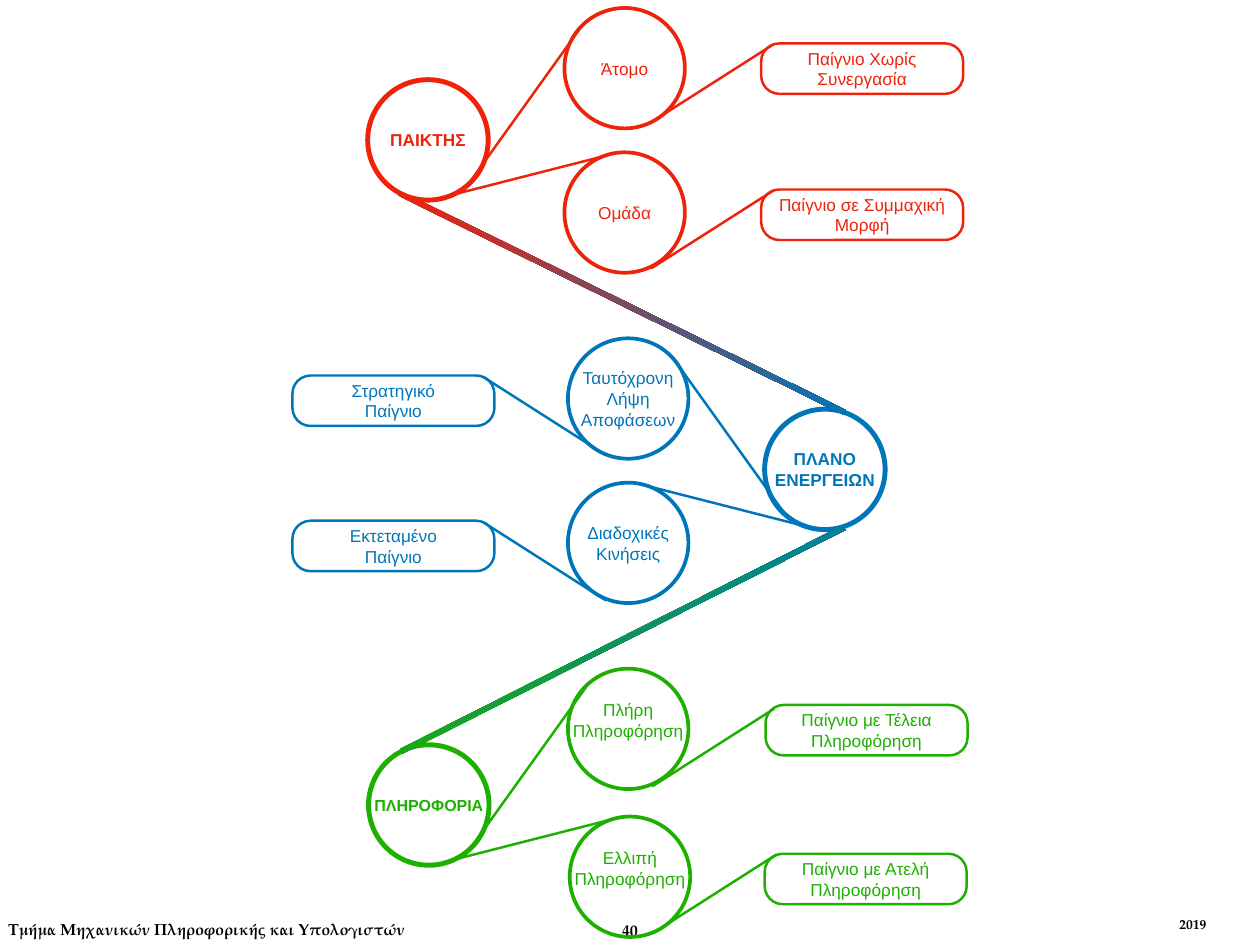
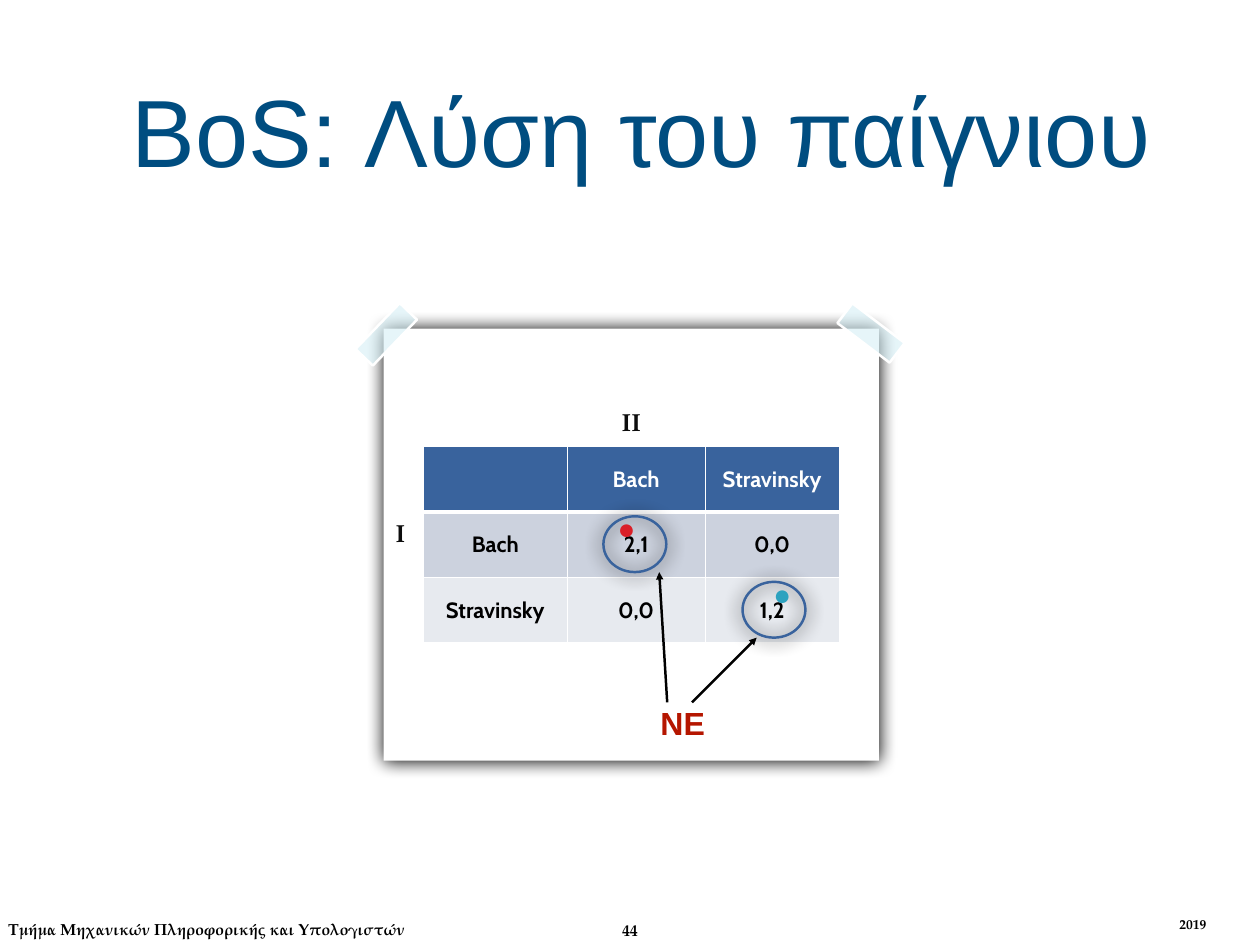
"""Builds two game theory slides: a map of game types and the solved BoS game."""
import pptx
import pptx.util
import pptx.dml.color
import pptx.enum.shapes
import pptx.enum.text
import pptx.oxml
import pptx.oxml.ns

PX = 9144
WIDTH, HEIGHT = 1422, 1067
SHAPE = pptx.enum.shapes.MSO_SHAPE
ALIGN = pptx.enum.text.PP_ALIGN
ANCHOR = pptx.enum.text.MSO_ANCHOR


class Theme:
    """Colours, fonts and type sizes."""
    red, blue, green = "EE230C", "0076BA", "1EB001"
    white, black, ink = "FFFFFF", "000000", "0D0D0D"
    title, header, answer = "004D80", "39639D", "B51600"
    bands = ["39639D", "CCD2DE", "E7EAEF"]
    tape, dot_one, dot_two = "D3EEF5", "DA1F28", "2DA2BF"
    sans, serif, table = "Arial", "TeX Gyre Pagella", "Cabin"
    title_size, answer_size, dot_size, player_size = 77.6, 26, 24, 20
    payoff_size, label_size, footer_size, year_size = 18, 14, 13, 11


DEPARTMENT, YEAR = "Τμήμα Μηχανικών Πληροφορικής και Υπολογιστών", "2019"

CIRCLE, OUTCOME = 136, (228, 57)
SPOKES = [(129, -180), (200, -51)]
OUTCOME_LINK = (138, -88)
BRANCHES = [
    dict(hub=("ΠΑΙΚΤΗΣ", 415, 90), size=Theme.label_size, color=Theme.red, side=1, lift=0, choices=[
        dict(choice=("Άτομο", 637, 9), spoke=(525, 213), link=(735, 138),
             outcome=("Παίγνιο Χωρίς\vΣυνεργασία", 859, 49)),
        dict(choice=("Ομάδα", 637, 172), spoke=(483, 227), link=(735, 303),
             outcome=("Παίγνιο σε Συμμαχική\vΜορφή", 859, 214))]),
    dict(hub=("ΠΛΑΝΟ\vΕΝΕΡΓΕΙΩΝ", 863, 462), size=Theme.label_size, color=Theme.blue, side=-1, lift=0, choices=[
        dict(choice=("Ταυτόχρονη\vΛήψη\vΑποφάσεων", 641, 382), spoke=(887, 582), link=(684, 514),
             outcome=("Στρατηγικό\vΠαίγνιο", 330, 424)),
        dict(choice=("Διαδοχικές\vΚινήσεις", 641, 545), spoke=(916, 596), link=(684, 678),
             outcome=("Εκτεταμένο\vΠαίγνιο", 330, 588))]),
    dict(hub=("ΠΛΗΡΟΦΟΡΙΑ", 416, 841), size=Theme.footer_size, color=Theme.green, side=1, lift=20, choices=[
        dict(choice=("Πλήρη\vΠληροφόρηση", 641, 755), spoke=(533, 955), link=(736, 888),
             outcome=("Παίγνιο με Τέλεια\vΠληροφόρηση", 864, 796)),
        dict(choice=("Ελλιπή\vΠληροφόρηση", 643, 922), spoke=(499, 974), link=(738, 1053),
             outcome=("Παίγνιο με Ατελή\vΠληροφόρηση", 863, 964))]),
]
BRIDGES = [((422, 339, 560, 6), 26.2, Theme.red), ((423, 719, 560, 6), 333.2, Theme.green)]

TITLE = "BoS: Λύση του παίγνιου"
PAYOFFS = [["", "Bach", "Stravinsky"], ["Bach", "2,1", "0,0"], ["Stravinsky", "0,0", "1,2"]]
COLUMNS, ROW = [162, 156, 151], 74
PAPER = (433, 371, 559, 488)
TAPES = [((946, 362, 74, 28), 37.2), ((400, 364, 72, 27), 313.9)]
EQUILIBRIA = [(838, 657, 71, 63), (681, 583, 71, 63)]
BEST_REPLIES = [((868, 645, 16, 49), Theme.dot_two), ((692, 571, 16, 49), Theme.dot_one)]
ARROWS = [((781, 793), (854, 720)), ((753, 793), (744, 646))]


def emu(lengths):
    return [round(length * PX) for length in lengths]


def rgb(value):
    return pptx.dml.color.RGBColor.from_string(value)


def add_xml(parent, markup, index=None):
    root, rest = markup.split(" ", 1) if " " in markup.split(">")[0] else (markup[:-2], "/>")
    element = pptx.oxml.parse_xml(f"{root} {pptx.oxml.ns.nsdecls('a')} {rest}")
    parent.insert(len(parent) if index is None else index, element)


def write(frame, text, size, color, font=Theme.sans, bold=False, align=ALIGN.CENTER,
          anchor=ANCHOR.MIDDLE, insets=(6, 6, 6, 6), wrap=True):
    frame.text = text
    frame.word_wrap = wrap
    frame.vertical_anchor = anchor
    frame.margin_left, frame.margin_top, frame.margin_right, frame.margin_bottom = emu(insets)
    style(frame.paragraphs[0], size, color, font, bold, align)


def style(paragraph, size, color, font, bold, align):
    paragraph.alignment = align
    for run in paragraph.runs:
        run.font.size = pptx.util.Pt(size)
        run.font.name = font
        run.font.bold = bold
        run.font.color.rgb = rgb(color)


def label(slide, box, text, size, color, **options):
    frame = slide.shapes.add_textbox(*emu(box)).text_frame
    write(frame, text, size, color, **options)
    return frame


def shape(slide, kind, box, fill=None, line=None, weight=2, shadow=False):
    part = slide.shapes.add_shape(kind, *emu(box))
    part.shadow.inherit = False
    if fill:
        part.fill.solid()
        part.fill.fore_color.rgb = rgb(fill)
    else:
        part.fill.background()
    if line:
        part.line.color.rgb = rgb(line)
        part.line.width = pptx.util.Pt(weight)
    else:
        part.line.fill.background()
    if shadow:
        effects = part._element.spPr.find(pptx.oxml.ns.qn("a:effectLst"))
        add_xml(effects, '<a:outerShdw blurRad="190500" dist="8890" dir="5400000" rotWithShape="0">'
                         f'<a:srgbClr val="{Theme.black}"/></a:outerShdw>')
    return part


def connect(slide, start, end, color, arrow=False):
    link = slide.shapes.add_connector(pptx.enum.shapes.MSO_CONNECTOR.STRAIGHT, *emu(start + end))
    link.line.color.rgb = rgb(color)
    link.line.width = pptx.util.Pt(2)
    if arrow:
        add_xml(link.line._get_or_add_ln(), '<a:tailEnd type="triangle"/>')
    add_xml(link._element.spPr, "<a:effectLst/>")


def add_table(slide, left, top, columns, rows):
    size = emu((left, top, sum(columns), sum(rows)))
    table = slide.shapes.add_table(len(rows), len(columns), *size).table
    table.first_row = table.horz_banding = False
    for column, width in zip(table.columns, emu(columns)):
        column.width = width
    for row, height in zip(table.rows, emu(rows)):
        row.height = height
    return table


def write_cell(cell, text, size, color, font, align, anchor, inset):
    cell.text = text
    cell.vertical_anchor = anchor
    cell.margin_left, cell.margin_top, cell.margin_right, cell.margin_bottom = emu([inset] * 4)
    style(cell.text_frame.paragraphs[0], size, color, font, True, align)


def new_slide(deck, number):
    slide = deck.slides.add_slide(deck.slide_layouts[6])
    footer = dict(font=Theme.serif, bold=True, align=ALIGN.RIGHT, anchor=ANCHOR.TOP)
    label(slide, (2, 1033, 460, 32), DEPARTMENT, Theme.footer_size, Theme.black,
          insets=(5, 5, 5, 5), **footer)
    year = add_table(slide, 1324, 1032, [57], [33]).cell(0, 0)
    write_cell(year, YEAR, Theme.year_size, Theme.black, Theme.serif, ALIGN.LEFT, ANCHOR.TOP, 7)
    year.fill.background()
    label(slide, (695, 1033, 31, 33), number, Theme.footer_size, Theme.black, wrap=False, **footer)
    return slide


def circle(slide, content, color, weight, size, bold=False, lift=0):
    text, left, top = content
    ring = shape(slide, SHAPE.OVAL, (left, top, CIRCLE, CIRCLE), line=color, weight=weight)
    write(ring.text_frame, text, size, color, bold=bold, insets=(0, 0, 0, lift), wrap=False)


def ray(slide, start, reach, side, color):
    connect(slide, start, (start[0] + side * reach[0], start[1] + reach[1]), color)


def game_map(deck):
    slide = new_slide(deck, "40")
    for branch in BRANCHES:
        color, side = branch["color"], branch["side"]
        circle(slide, branch["hub"], color, 4, branch["size"], bold=True)
        for option, reach in zip(branch["choices"], SPOKES):
            circle(slide, option["choice"], color, 3, Theme.label_size, lift=branch["lift"])
            ray(slide, option["spoke"], reach, side, color)
            ray(slide, option["link"], OUTCOME_LINK, side, color)
            text, left, top = option["outcome"]
            outcome = shape(slide, SHAPE.ROUNDED_RECTANGLE, (left, top, *OUTCOME), line=color)
            outcome.adjustments[0] = 0.36
            write(outcome.text_frame, text, Theme.label_size, color, insets=(0, 0, 0, 0), wrap=False)
    for box, angle, color in BRIDGES:
        bridge = shape(slide, SHAPE.RECTANGLE, box)
        bridge.rotation = angle
        bridge.fill.gradient()
        bridge.fill.gradient_angle = 315
        for stop, shade in zip(bridge.fill.gradient_stops, (color, Theme.blue)):
            stop.color.rgb = rgb(shade)


def payoff_table(slide):
    table = add_table(slide, 478, 504, COLUMNS, [ROW] * len(PAYOFFS))
    for r, row in enumerate(PAYOFFS):
        for c, text in enumerate(row):
            cell = table.cell(r, c)
            write_cell(cell, text, Theme.payoff_size, Theme.black if r else Theme.white,
                       Theme.table, ALIGN.CENTER, ANCHOR.MIDDLE, 5)
            cell.fill.solid()
            cell.fill.fore_color.rgb = rgb(Theme.bands[r])
            weights = dict(L=1, R=1, T=3 if r == 1 else 1, B=3 if r == 0 else 1)
            for place, (edge, weight) in enumerate(weights.items()):
                add_xml(cell._tc.get_or_add_tcPr(),
                        f'<a:ln{edge} w="{weight * 12700}"><a:solidFill><a:srgbClr '
                        f'val="{Theme.white}"/></a:solidFill></a:ln{edge}>', place)


def solved_game(deck):
    slide = new_slide(deck, "44")
    shape(slide, SHAPE.RECTANGLE, PAPER, fill=Theme.white, shadow=True)
    payoff_table(slide)
    player = dict(font=Theme.serif, bold=True, insets=(5, 5, 5, 5))
    row_player = label(slide, (429, 366, 46, 483), "I", Theme.player_size, Theme.ink, **player)
    row_player.paragraphs[0].line_spacing = pptx.util.Pt(16)
    label(slide, (471, 454, 483, 46), "II", Theme.player_size, Theme.ink, anchor=ANCHOR.TOP, **player)
    for box, angle in TAPES:
        tape = shape(slide, SHAPE.RECTANGLE, box, fill=Theme.tape, line=Theme.white)
        tape.rotation = angle
        tint = tape._element.spPr.find(pptx.oxml.ns.qn("a:solidFill"))[0]
        add_xml(tint, '<a:alpha val="56000"/>')
    for box in EQUILIBRIA:
        shape(slide, SHAPE.OVAL, box, line=Theme.header, shadow=True)
    label(slide, (117, 28, 1214, 236), TITLE, Theme.title_size, Theme.title)
    for box, color in BEST_REPLIES:
        label(slide, box, "●", Theme.dot_size, color, align=ALIGN.LEFT,
              anchor=ANCHOR.TOP, insets=(5, 5, 5, 5))
    label(slide, (727, 794, 87, 43), "NE", Theme.answer_size, Theme.answer, bold=True,
          insets=(0, 0, 0, 0))
    for start, end in ARROWS:
        connect(slide, start, end, Theme.black, arrow=True)


def main():
    deck = pptx.Presentation()
    deck.slide_width, deck.slide_height = emu((WIDTH, HEIGHT))
    game_map(deck)
    solved_game(deck)
    deck.save("out.pptx")


if __name__ == "__main__":
    main()
